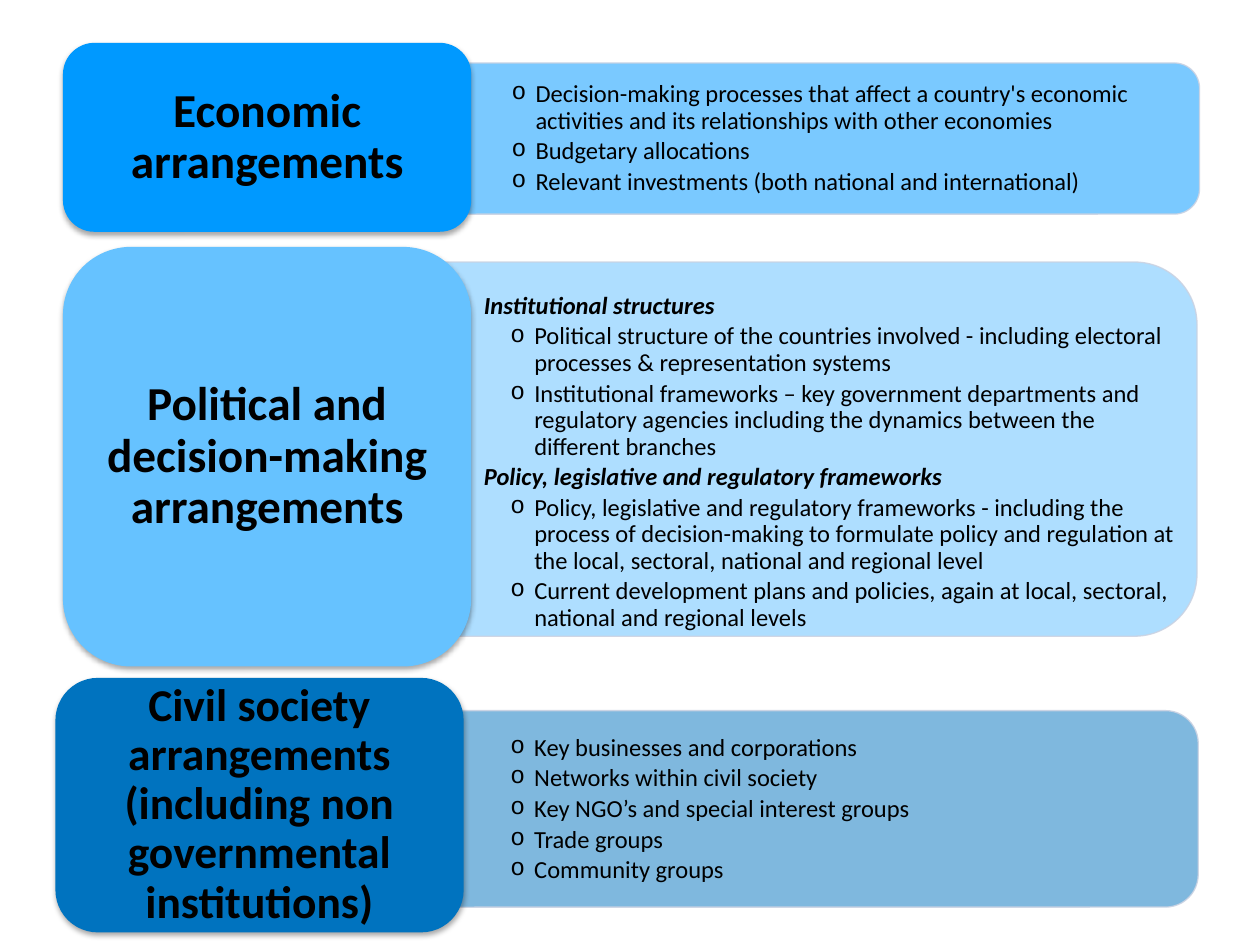
import pptx
import pptx.util
import pptx.dml.color
import pptx.enum.shapes
import pptx.enum.text
import pptx.oxml.ns
import lxml.etree

Inches = pptx.util.Inches
Pt = pptx.util.Pt
SHAPES = pptx.enum.shapes.MSO_SHAPE
ALIGN = pptx.enum.text.PP_ALIGN
MIDDLE = pptx.enum.text.MSO_ANCHOR.MIDDLE

# Each box is left, top, width, height in inches. Lines are (is_heading, text).
ROWS = [
    {
        "label": "Economic arrangements", "label_size": 27,
        "color": "0099FF", "opacity": 52,
        "card": (0.5, 0.34, 3.24, 1.5),
        "panel": (3.02, 0.5, 6.5, 1.2),
        "text": (3.02, 0.56, 6.43, 1.08),
        "lines": [
            (False, "Decision-making processes that affect a country's economic "
                    "activities and its relationships with other economies"),
            (False, "Budgetary allocations"),
            (False, "Relevant investments (both national and international)"),
        ],
    },
    {
        "label": "Political and decision-making arrangements", "label_size": 27,
        "color": "66C2FF", "opacity": 53,
        "card": (0.5, 1.96, 3.24, 3.33),
        "panel": (3.01, 2.08, 6.49, 2.97),
        "text": (3.01, 2.18, 6.42, 2.98),
        "lines": [
            (True, "Institutional structures"),
            (False, "Political structure of the countries involved - including "
                    "electoral processes & representation systems"),
            (False, "Institutional frameworks – key government departments and "
                    "regulatory agencies including the dynamics between the "
                    "different branches"),
            (True, "Policy, legislative and regulatory frameworks"),
            (False, "Policy, legislative and regulatory frameworks - including the "
                    "process of decision-making to formulate policy and regulation "
                    "at the local, sectoral, national and regional level"),
            (False, "Current development plans and policies, again at local, "
                    "sectoral, national and regional levels"),
        ],
    },
    {
        "label": "Civil society arrangements (including non governmental institutions)",
        "label_size": 26,
        "color": "0073BF", "opacity": 50,
        "card": (0.44, 5.38, 3.24, 2.02),
        "panel": (3.01, 5.64, 6.5, 1.56),
        "text": (3.01, 5.72, 6.43, 1.41),
        "lines": [
            (False, "Key businesses and corporations"),
            (False, "Networks within civil society"),
            (False, "Key NGO’s and special interest groups"),
            (False, "Trade groups"),
            (False, "Community groups"),
        ],
    },
]


def rgb(color):
    return pptx.dml.color.RGBColor.from_string(color)


def add_child(parent, tag, **attributes):
    child = lxml.etree.SubElement(parent, pptx.oxml.ns.qn(tag))
    for name, value in attributes.items():
        child.set(name, str(value))
    return child


def set_opacity(fill, color, percent):
    """Fill with a solid colour that lets the background show through."""
    fill.solid()
    fill.fore_color.rgb = rgb(color)
    # The fill element is found through the colour's public parent object.
    return percent * 1000


def add_alpha(shape_properties, percents):
    """Set the opacity of the solid colours, in document order."""
    colors = shape_properties.iter(pptx.oxml.ns.qn("a:srgbClr"))
    for color, percent in zip(list(colors), percents):
        add_child(color, "a:alpha", val=percent * 1000)


def add_shadow(shape):
    shape.shadow.inherit = False
    effects = shape.element.spPr.find(pptx.oxml.ns.qn("a:effectLst"))
    shadow = add_child(effects, "a:outerShdw", blurRad=Pt(3.1), dist=Pt(1.8),
                       dir=90 * 60000, rotWithShape=0)
    color = add_child(shadow, "a:srgbClr", val="000000")
    add_child(color, "a:alpha", val=35000)


def set_frame(frame, horizontal, vertical):
    frame.word_wrap = True
    frame.vertical_anchor = MIDDLE
    frame.margin_left = frame.margin_right = Inches(horizontal)
    frame.margin_top = frame.margin_bottom = Inches(vertical)


def write(paragraph, text, size, bold=False, italic=False, align=ALIGN.LEFT,
          space_after=0, margin=0, indent=0, bullet=None):
    paragraph.alignment = align
    paragraph.line_spacing = 0.9
    paragraph.space_after = Pt(space_after)
    run = paragraph.add_run()
    run.text = text
    run.font.name = "Calibri"
    run.font.size = Pt(size)
    run.font.bold = bold
    run.font.italic = italic
    run.font.color.rgb = rgb("000000")
    properties = paragraph._p.get_or_add_pPr()
    properties.set("marL", str(Inches(margin)))
    properties.set("indent", str(Inches(indent)))
    if bullet:
        add_child(properties, "a:buFont", typeface="Courier New")
        add_child(properties, "a:buChar", char=bullet)


def add_panel(slide, box, color, opacity):
    """Draw a panel whose right corners are round: a round-topped shape turned 90°."""
    left, top, width, height = box
    shift = (width - height) / 2
    panel = slide.shapes.add_shape(
        SHAPES.ROUND_2_SAME_RECTANGLE, Inches(left + shift), Inches(top - shift),
        Inches(height), Inches(width))
    panel.rotation = 90
    panel.shadow.inherit = False
    panel.fill.solid()
    panel.fill.fore_color.rgb = rgb(color)
    panel.line.color.rgb = rgb("CBD3E3")
    panel.line.width = Pt(0.75)
    add_alpha(panel.element.spPr, [opacity, 90])


def add_details(slide, box, lines):
    frame = slide.shapes.add_textbox(*map(Inches, box)).text_frame
    set_frame(frame, 0.04, 0.02)
    for index, (is_heading, text) in enumerate(lines):
        paragraph = frame.add_paragraph() if index else frame.paragraphs[0]
        if is_heading:
            style = {"bold": True, "italic": True, "margin": 0.79}
        else:
            style = {"margin": 1.19, "indent": -0.19, "bullet": "o"}
        write(paragraph, text, 14, space_after=2.35, **style)


def add_card(slide, box, color, label, size):
    card = slide.shapes.add_shape(SHAPES.ROUNDED_RECTANGLE, *map(Inches, box))
    card.fill.solid()
    card.fill.fore_color.rgb = rgb(color)
    card.line.fill.background()
    add_shadow(card)
    set_frame(card.text_frame, 0.11, 0.06)
    write(card.text_frame.paragraphs[0], label, size, bold=True, align=ALIGN.CENTER)


def add_row(slide, row):
    add_panel(slide, row["panel"], row["color"], row["opacity"])
    add_details(slide, row["text"], row["lines"])
    add_card(slide, row["card"], row["color"], row["label"], row["label_size"])


def main():
    presentation = pptx.Presentation()
    presentation.slide_width = Inches(10)
    presentation.slide_height = Inches(7.5)
    slide = presentation.slides.add_slide(presentation.slide_layouts[6])
    for row in ROWS:
        add_row(slide, row)
    presentation.save("out.pptx")


if __name__ == "__main__":
    main()
